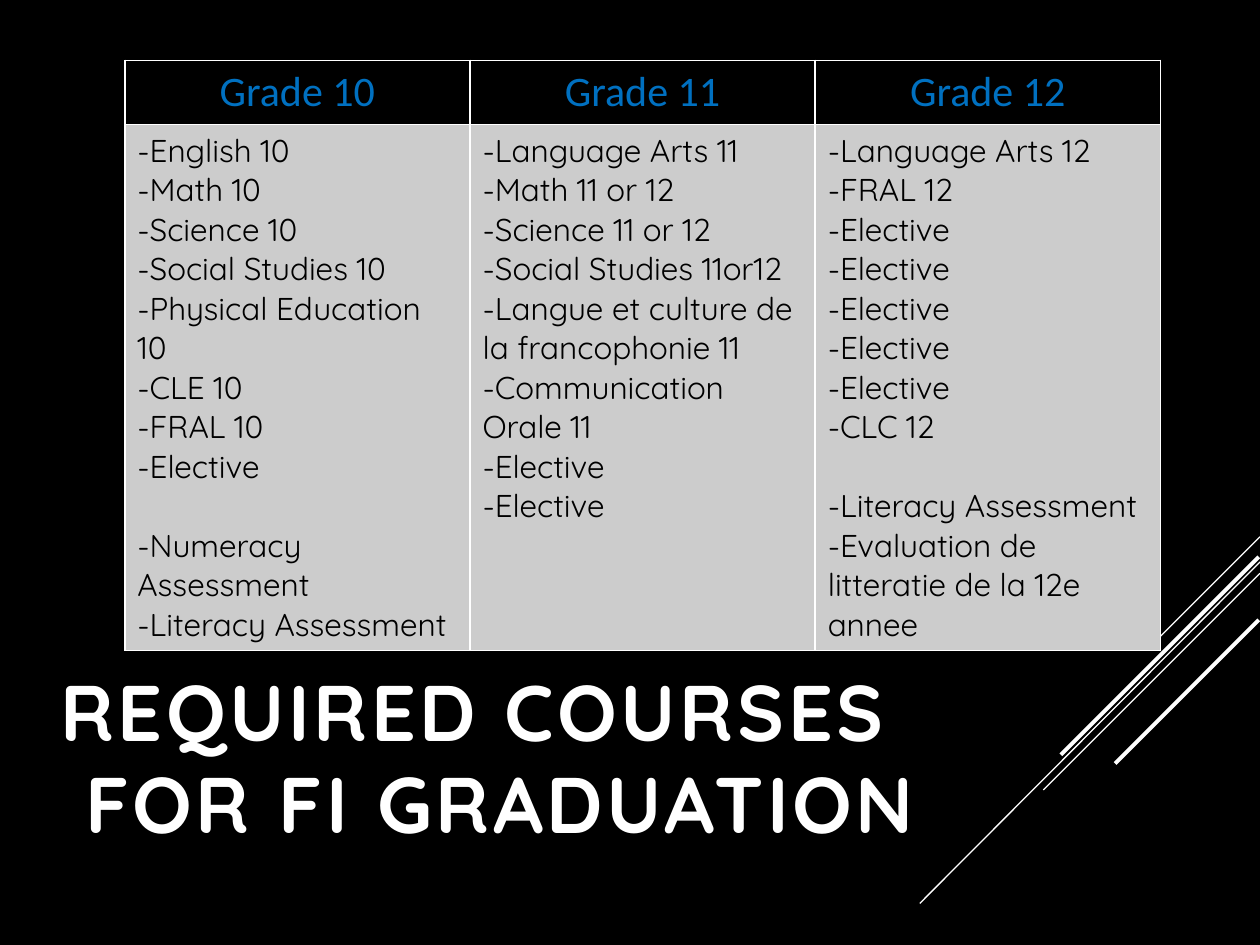
from lxml import etree
from pptx import Presentation
from pptx.dml.color import RGBColor
from pptx.enum.shapes import MSO_CONNECTOR
from pptx.enum.text import MSO_ANCHOR, MSO_AUTO_SIZE, PP_ALIGN
from pptx.oxml.ns import qn
from pptx.util import Inches, Pt

STRAIGHT = MSO_CONNECTOR.STRAIGHT
MIDDLE = MSO_ANCHOR.MIDDLE
NO_AUTOFIT = MSO_AUTO_SIZE.NONE
LEFT, CENTER = PP_ALIGN.LEFT, PP_ALIGN.CENTER

COLORS = {"black": "000000", "white": "FFFFFF", "blue": "0070C0", "gray": "CCCCCC"}
FORMATS = {
    "title": {"name": "Quicksand", "size": Pt(45), "bold": True, "color": "white"},
    "header": {"name": "Calibri", "size": Pt(24), "bold": False, "color": "blue"},
    "course": {"name": "Quicksand", "size": Pt(18), "bold": False, "color": "black"},
}
BORDER_SIDES = ("a:lnL", "a:lnR", "a:lnT", "a:lnB")

# Each grade holds groups of courses; a one-line gap parts the groups
GRADES = {
    "Grade 10": [
        ["-English 10", "-Math 10", "-Science 10", "-Social Studies 10",
         "-Physical Education 10", "-CLE 10", "-FRAL 10", "-Elective"],
        ["-Numeracy Assessment", "-Literacy Assessment"],
    ],
    "Grade 11": [
        ["-Language Arts 11", "-Math 11 or 12", "-Science 11 or 12",
         "-Social Studies 11or12", "-Langue et culture de la francophonie 11",
         "-Communication Orale 11", "-Elective", "-Elective"],
    ],
    "Grade 12": [
        ["-Language Arts 12", "-FRAL 12"] + ["-Elective"] * 5 + ["-CLC 12"],
        ["-Literacy Assessment", "-Evaluation de litteratie de la 12e annee"],
    ],
}

# Diagonal lines: right end x, y, horizontal and vertical run, width in points
DIAGONALS = [
    (10, 4.26, 0.83, 0.83, 0.75),
    (10, 4.46, 2.7, 2.71, 0.75),
    (10, 4.55, 1.72, 1.72, 0.75),
    (9.99, 4.42, 1.57, 1.57, 2.25),
    (9.99, 4.92, 1.14, 1.14, 2.25),
]


class SlideBuilder:
    def __init__(self, presentation):
        self.slide = presentation.slides.add_slide(presentation.slide_layouts[5])

    def color(self, name):
        return RGBColor.from_string(COLORS[name])

    def background(self, color):
        fill = self.slide.background.fill
        fill.solid()
        fill.fore_color.rgb = self.color(color)

    def format_font(self, font, style):
        for key, value in FORMATS[style].items():
            if key == "color":
                font.color.rgb = self.color(value)
            else:
                setattr(font, key, value)

    def diagonal(self, x, y, run, drop, width):
        line = self.slide.shapes.add_connector(
            STRAIGHT, Inches(x), Inches(y), Inches(x - run), Inches(y + drop))
        line.line.color.rgb = self.color("white")
        line.line.width = Pt(width)
        etree.SubElement(line._element.spPr, qn("a:effectLst"))

    def title(self, text, left, top, width, height):
        shape = self.slide.shapes.title
        place = {"left": left, "top": top, "width": width, "height": height}
        for key, value in place.items():
            setattr(shape, key, Inches(value))
        frame = shape.text_frame
        frame.text = text
        frame.word_wrap = True
        frame.auto_size = NO_AUTOFIT
        frame.vertical_anchor = MIDDLE
        paragraph = frame.paragraphs[0]
        paragraph.alignment = LEFT
        paragraph.line_spacing = 0.97
        # Hanging indent sets the second line a little to the right
        properties = paragraph._p.get_or_add_pPr()
        properties.set("marL", str(Inches(0.2)))
        properties.set("indent", str(-Inches(0.2)))
        for run in paragraph.runs:
            self.format_font(run.font, "title")
            run._r.get_or_add_rPr().set("spc", "200")

    def cell(self, cell, groups, style, fill, alignment):
        frame = cell.text_frame
        paragraph = frame.paragraphs[0]
        for group_index, group in enumerate(groups):
            for index, text in enumerate(group):
                if group_index or index:
                    paragraph = frame.add_paragraph()
                if group_index and not index:
                    paragraph.space_before = Pt(22.5)
                paragraph.alignment = alignment
                run = paragraph.add_run()
                run.text = text
                self.format_font(run.font, style)
        self.borders(cell)
        cell.fill.solid()
        cell.fill.fore_color.rgb = self.color(fill)

    def borders(self, cell):
        properties = cell._tc.get_or_add_tcPr()
        for side in BORDER_SIDES:
            line = etree.SubElement(properties, qn(side), w=str(Pt(1)))
            solid = etree.SubElement(line, qn("a:solidFill"))
            etree.SubElement(solid, qn("a:srgbClr"), val=COLORS["white"])

    def course_table(self, grades, left, top, column_width, row_heights):
        table = self.slide.shapes.add_table(
            len(row_heights), len(grades), Inches(left), Inches(top),
            Inches(column_width * len(grades)), Inches(sum(row_heights))).table
        table.first_row = table.horz_banding = False
        for row, height in zip(table.rows, row_heights):
            row.height = Inches(height)
        for index, (grade, groups) in enumerate(grades.items()):
            table.columns[index].width = Inches(column_width)
            self.cell(table.cell(0, index), [[grade]], "header", "black", CENTER)
            self.cell(table.cell(1, index), groups, "course", "gray", LEFT)


def main():
    presentation = Presentation()
    presentation.slide_width = Inches(10)
    presentation.slide_height = Inches(7.5)
    builder = SlideBuilder(presentation)
    builder.background("black")

    # Decorative diagonals, behind the table
    for diagonal in DIAGONALS:
        builder.diagonal(*diagonal)

    # Title and course table
    builder.title("REQUIRED COURSES\vFOR FI GRADUATION", 0.38, 5.23, 9.46, 1.6)
    builder.course_table(GRADES, 0.99, 0.48, 2.74, (0.51, 4.17))

    presentation.save("out.pptx")


if __name__ == "__main__":
    main()
